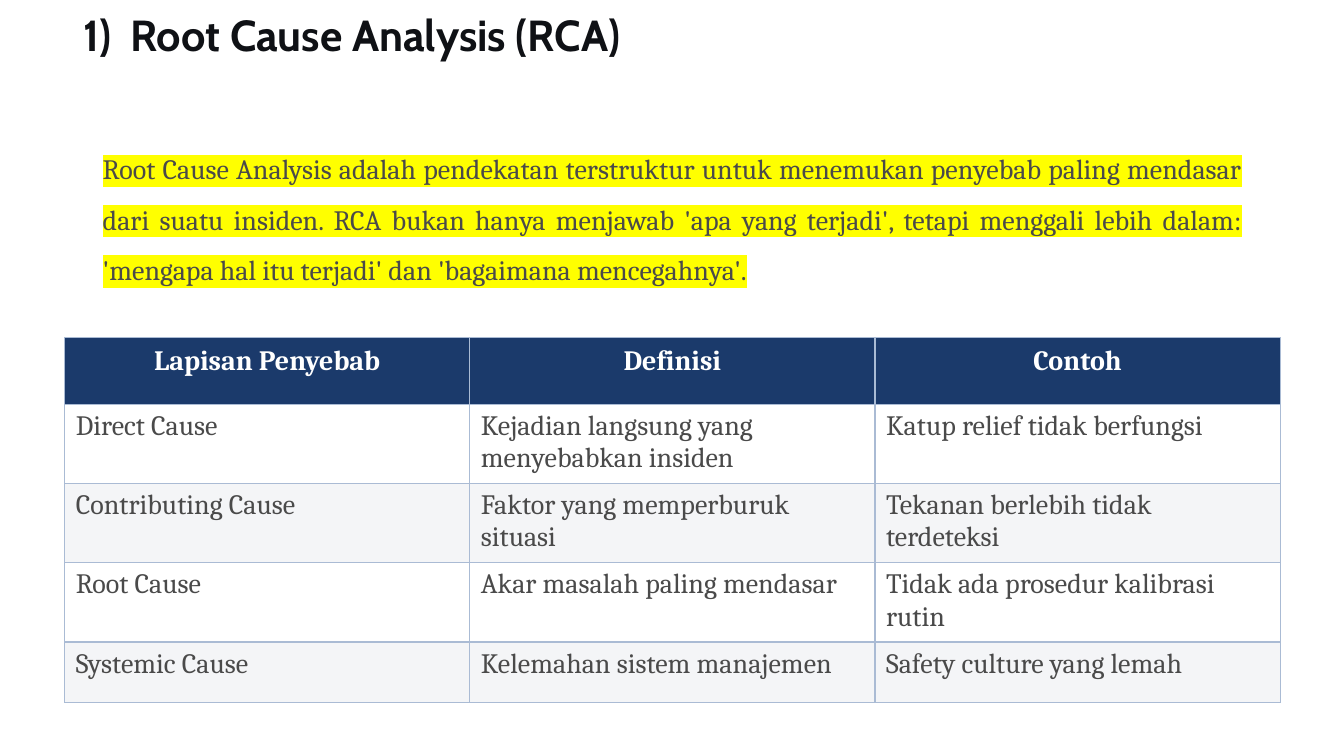
from lxml import etree
from pptx import Presentation
from pptx import util as u
from pptx.dml.color import RGBColor
from pptx.enum import text
from pptx.oxml import ns

TITLE = "1)\tRoot Cause Analysis (RCA)"
INTRO = (
    "Root Cause Analysis adalah pendekatan terstruktur untuk menemukan penyebab "
    "paling mendasar dari suatu insiden. RCA bukan hanya menjawab 'apa yang terjadi', "
    "tetapi menggali lebih dalam: 'mengapa hal itu terjadi' dan 'bagaimana mencegahnya'."
)
CAUSES = [
    ("Lapisan Penyebab", "Definisi", "Contoh"),
    ("Direct Cause", "Kejadian langsung yang menyebabkan insiden", "Katup relief tidak berfungsi"),
    ("Contributing Cause", "Faktor yang memperburuk situasi", "Tekanan berlebih tidak terdeteksi"),
    ("Root Cause", "Akar masalah paling mendasar", "Tidak ada prosedur kalibrasi rutin"),
    ("Systemic Cause", "Kelemahan sistem manajemen", "Safety culture yang lemah"),
]

INK = RGBColor(0x0F, 0x11, 0x15)
GRAY = RGBColor(0x4A, 0x4A, 0x4A)
WHITE = RGBColor(0xFF, 0xFF, 0xFF)
NAVY = RGBColor(0x1B, 0x3A, 0x6B)
BAND = RGBColor(0xF4, 0xF5, 0xF7)
BORDER = RGBColor(0xAA, 0xBB, 0xD4)
YELLOW = RGBColor(0xFF, 0xFF, 0x00)

COL_W, HEAD_H, ROW_H = u.Cm(10.21), u.Cm(1.68), u.Cm(1.52)
ALIGN = text.PP_ALIGN


def assign(obj, values):
    for name, value in values.items():
        setattr(obj, name, value)


def add(parent, tag, **attrs):
    return etree.SubElement(parent, ns.qn(tag), attrs)


def write(tf, words, size, face, color, bold=False, **layout):
    p = tf.paragraphs[0]
    assign(p, layout)
    r = p.add_run()
    r.text = words
    assign(r.font, {"size": u.Pt(size), "bold": bold})
    r.font.color.rgb = color
    return p, r


def set_face(r, face):
    r.font.name = face


def add_title(s):
    sp = s.shapes.title
    assign(sp, {"left": u.Cm(1.85), "top": 0, "width": u.Cm(29.21), "height": u.Cm(3.68)})
    tf = sp.text_frame
    assign(tf, {"auto_size": text.MSO_AUTO_SIZE.NONE, "word_wrap": True,
                "vertical_anchor": text.MSO_ANCHOR.TOP, "margin_top": u.Cm(0.36)})
    p, r = write(tf, TITLE, 31, "Cabin", INK, True, alignment=ALIGN.LEFT, line_spacing=0.9)
    set_face(r, "Cabin")
    tabs = add(p._p.get_or_add_pPr(), "a:tabLst")
    add(tabs, "a:tab", pos=str(u.Cm(1.19)), algn="l")


def add_intro(s):
    sp = s.shapes.add_textbox(u.Cm(2.34), u.Cm(3.28), u.Cm(29.21), u.Cm(13.87))
    tf = sp.text_frame
    tf.word_wrap = True
    p, r = write(tf, INTRO, 20, "Cambria", GRAY, alignment=ALIGN.JUSTIFY,
                 line_spacing=1.5, space_after=u.Pt(4))
    mark = add(r._r.get_or_add_rPr(), "a:highlight")
    add(mark, "a:srgbClr", val=str(YELLOW))
    set_face(r, "Cambria")


def add_borders(cell):
    tc_pr = cell._tc.get_or_add_tcPr()
    for i, side in enumerate(("a:lnL", "a:lnR", "a:lnT", "a:lnB")):
        ln = etree.Element(ns.qn(side), {"w": str(u.Pt(1))})
        add(add(ln, "a:solidFill"), "a:srgbClr", val=str(BORDER))
        tc_pr.insert(i, ln)


def add_causes(s):
    n_rows, n_cols = len(CAUSES), len(CAUSES[0])
    height = HEAD_H + ROW_H * (n_rows - 1)
    table = s.shapes.add_table(n_rows, n_cols, u.Cm(1.63), u.Cm(8.51),
                               COL_W * n_cols, height).table
    for col in table.columns:
        col.width = COL_W
    for i, row in enumerate(CAUSES):
        head = i == 0
        table.rows[i].height = HEAD_H if head else ROW_H
        pad = u.Cm(0.18 if head else 0.15)
        for j, words in enumerate(row):
            cell = table.cell(i, j)
            assign(cell, {"margin_left": u.Cm(0.28), "margin_right": u.Cm(0.28),
                          "margin_top": pad, "margin_bottom": pad})
            cell.fill.solid()
            cell.fill.fore_color.rgb = NAVY if head else (BAND if i % 2 == 0 else WHITE)
            add_borders(cell)
            p, r = write(cell.text_frame, words, 20, "Cambria", WHITE if head else GRAY, head,
                         alignment=ALIGN.CENTER if head else ALIGN.LEFT)
            set_face(r, "Cambria")


def main():
    prs = Presentation()
    assign(prs, {"slide_width": u.Cm(33.87), "slide_height": u.Cm(19.05)})
    s = prs.slides.add_slide(prs.slide_layouts[5])
    add_title(s)
    add_intro(s)
    add_causes(s)
    prs.save("out.pptx")


if __name__ == "__main__":
    main()
